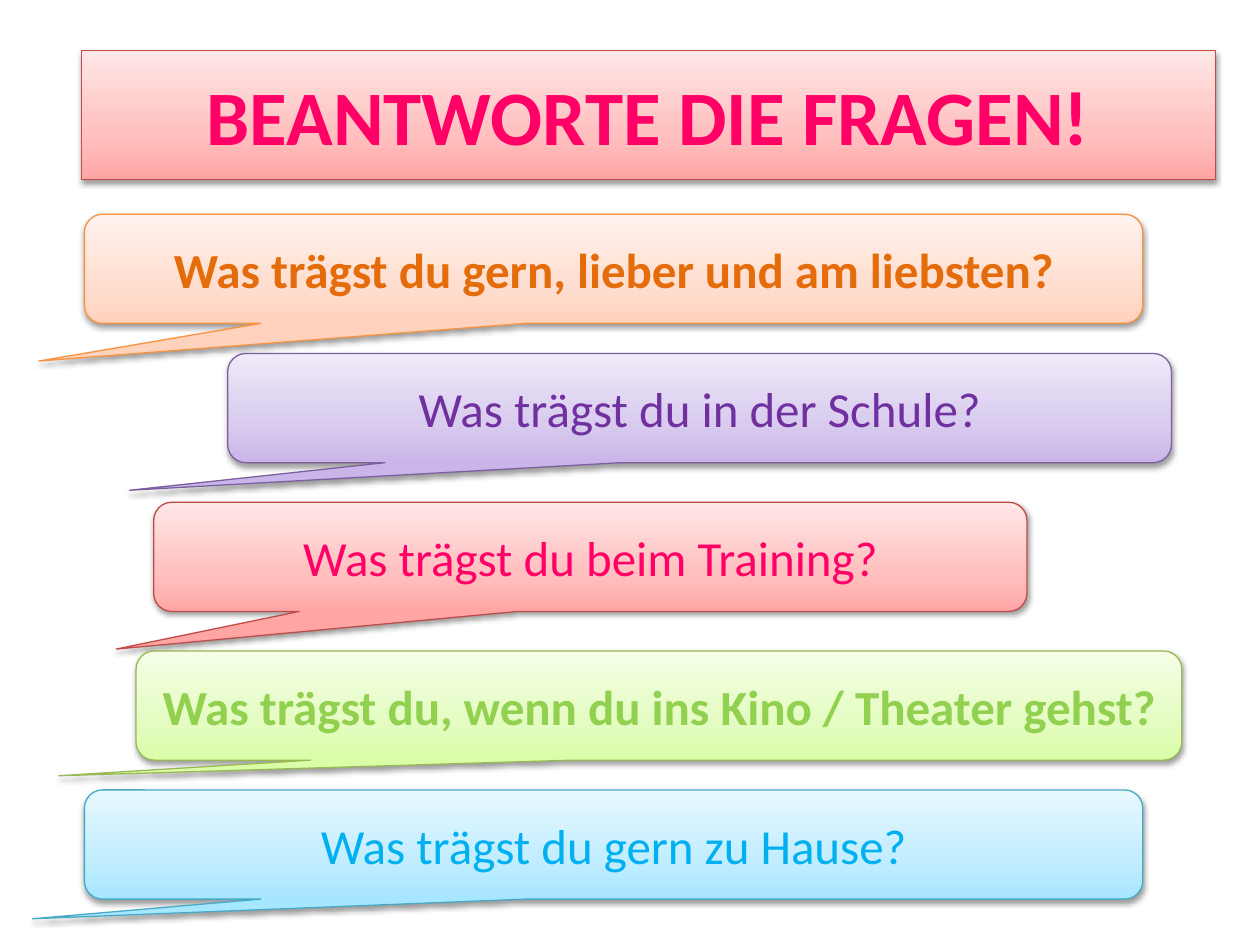
from copy import deepcopy

from lxml import etree
from pptx import Presentation
from pptx.dml.color import RGBColor
from pptx.enum import shapes, text
from pptx.oxml.ns import qn
from pptx.util import Pt

FONT = "Calibri"
BLACK = RGBColor(0x00, 0x00, 0x00)
PINK = RGBColor(0xFF, 0x00, 0x66)
ORANGE = RGBColor(0xE4, 0x6C, 0x0A)
PURPLE = RGBColor(0x70, 0x30, 0xA0)
GREEN = RGBColor(0x92, 0xD0, 0x50)
BLUE = RGBColor(0x00, 0xB0, 0xF0)

ORANGE_LINE = RGBColor(0xF6, 0x92, 0x40)
PURPLE_LINE = RGBColor(0x7D, 0x60, 0xA0)
RED_LINE = RGBColor(0xBF, 0x4C, 0x48)
GREEN_LINE = RGBColor(0x98, 0xB9, 0x55)
BLUE_LINE = RGBColor(0x46, 0xAA, 0xC5)

ORANGE_TINTS = [RGBColor(0xFF, 0xD2, 0xBD), RGBColor(0xFF, 0xDE, 0xD0), RGBColor(0xFF, 0xF2, 0xED)]
PURPLE_TINTS = [RGBColor(0xC9, 0xB5, 0xE8), RGBColor(0xD8, 0xCB, 0xEE), RGBColor(0xF0, 0xEA, 0xF9)]
RED_TINTS = [RGBColor(0xFF, 0xA6, 0xA5), RGBColor(0xFF, 0xC0, 0xBF), RGBColor(0xFF, 0xE7, 0xE7)]
GREEN_TINTS = [RGBColor(0xDA, 0xFD, 0xA7), RGBColor(0xE4, 0xFC, 0xC2), RGBColor(0xF5, 0xFF, 0xE7)]
BLUE_TINTS = [RGBColor(0xA7, 0xE6, 0xFF), RGBColor(0xC1, 0xED, 0xFF), RGBColor(0xE7, 0xF8, 0xFF)]
TINT_POSITIONS = [0, 0.35, 1]

CALLOUT_HEIGHT = 62.4
QUESTIONS = [
    ("Was trägst du gern, lieber und am liebsten?", (48.24, 122.4, 604.8),
     (-0.543, 0.845), ORANGE, ORANGE_LINE, ORANGE_TINTS, True),
    ("Was trägst du in der Schule?", (130.1, 202, 539.3),
     (-0.604, 0.753), PURPLE, PURPLE_LINE, PURPLE_TINTS, False),
    ("Was trägst du beim Training?", (87.84, 287, 499),
     (-0.543, 0.845), PINK, RED_LINE, RED_TINTS, False),
    ("Was trägst du, wenn du ins Kino / Theater gehst?", (77.76, 372, 597.6),
     (-0.574, 0.643), GREEN, GREEN_LINE, GREEN_TINTS, True),
    ("Was trägst du gern zu Hause?", (48.24, 451.4, 604.8),
     (-0.549, 0.68), BLUE, BLUE_LINE, BLUE_TINTS, False),
]


def write_text(shape, content, size, color, bold=False):
    frame = shape.text_frame
    frame.word_wrap = True
    frame.auto_size = text.MSO_AUTO_SIZE.NONE
    frame.vertical_anchor = text.MSO_ANCHOR.MIDDLE
    paragraph = frame.paragraphs[0]
    paragraph.alignment = text.PP_ALIGN.CENTER
    run = paragraph.add_run()
    run.text = content
    run.font.name = FONT
    run.font.size = Pt(size)
    run.font.bold = bold
    run.font.color.rgb = color


def add_shadow(shape):
    shape.shadow.inherit = False
    effects = shape._element.spPr.find(qn("a:effectLst"))
    shadow = etree.SubElement(
        effects, qn("a:outerShdw"), blurRad=str(Pt(3.1)), dist=str(Pt(1.6)),
        dir="5400000", rotWithShape="0")
    color = etree.SubElement(shadow, qn("a:srgbClr"), val=str(BLACK))
    etree.SubElement(color, qn("a:alpha"), val="38000")


def paint(shape, tints, line_color):
    shape.fill.gradient()
    shape.fill.gradient_angle = 90
    stop_list = shape._element.spPr.find(qn("a:gradFill")).find(qn("a:gsLst"))
    stop_list.append(deepcopy(stop_list[0]))
    for stop, tint, position in zip(shape.fill.gradient_stops, tints, TINT_POSITIONS):
        stop.color.rgb = tint
        stop.position = position
    shape.line.color.rgb = line_color
    shape.line.width = Pt(0.75)
    add_shadow(shape)


def place_title(slide, left, top, width, height):
    title = slide.shapes.title
    title.left, title.top = Pt(left), Pt(top)
    title.width, title.height = Pt(width), Pt(height)
    paint(title, RED_TINTS, RED_LINE)
    write_text(title, "BEANTWORTE DIE FRAGEN!", size=44, color=PINK, bold=True)


def add_question(slide, left, top, width, height, question, tail, color, line_color, tints, bold):
    callout = slide.shapes.add_shape(
        shapes.MSO_SHAPE.ROUNDED_RECTANGULAR_CALLOUT,
        Pt(left), Pt(top), Pt(width), Pt(height))
    callout.adjustments[0], callout.adjustments[1] = tail
    paint(callout, tints, line_color)
    write_text(callout, question, size=28, color=color, bold=bold)


def main():
    presentation = Presentation()
    presentation.slide_width, presentation.slide_height = Pt(720), Pt(540)
    slide = presentation.slides.add_slide(presentation.slide_layouts[5])
    place_title(slide, 46.6, 28.8, 648, 73.8)
    for question, (left, top, width), *style in QUESTIONS:
        add_question(slide, left, top, width, CALLOUT_HEIGHT, question, *style)
    presentation.save("out.pptx")


if __name__ == "__main__":
    main()
